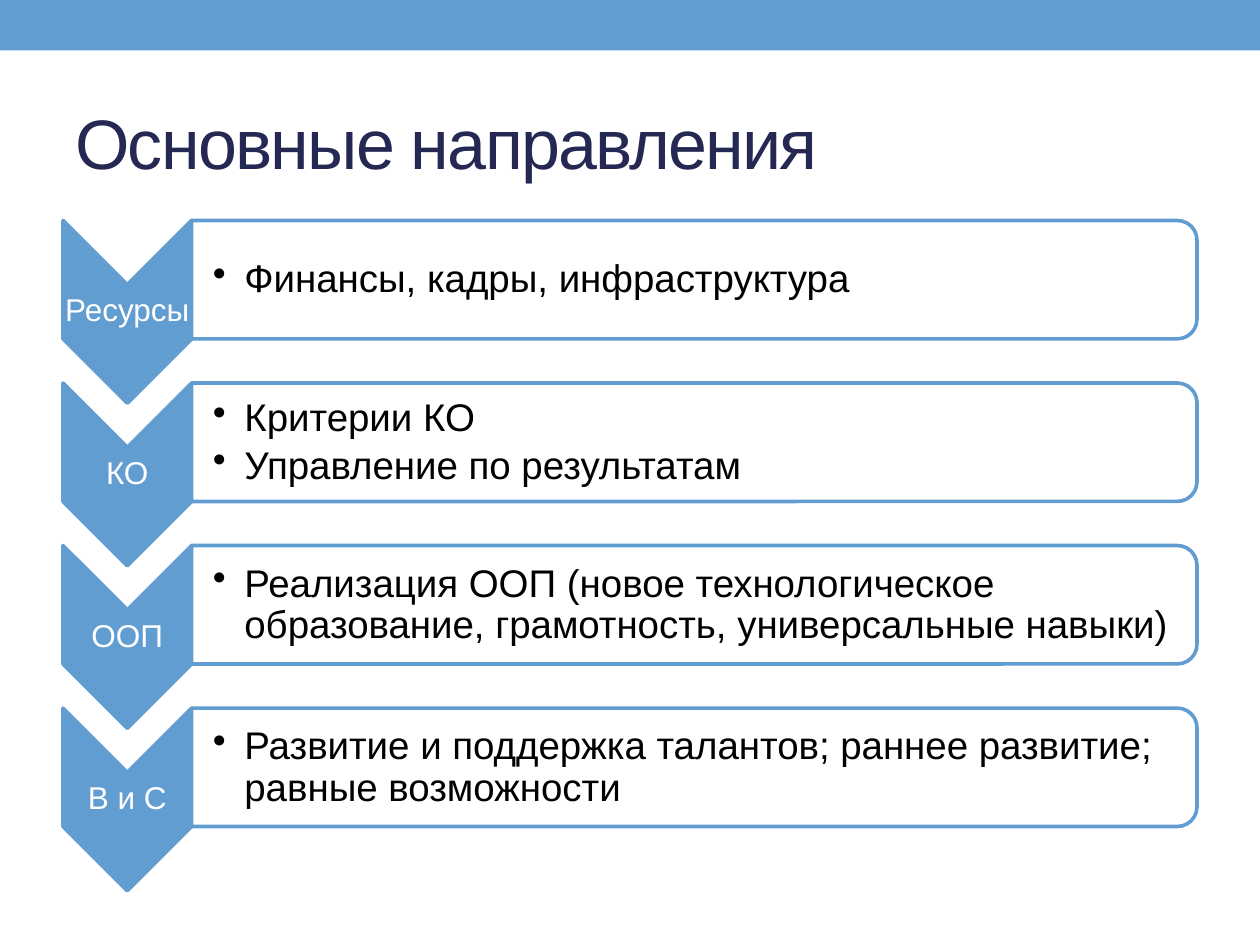
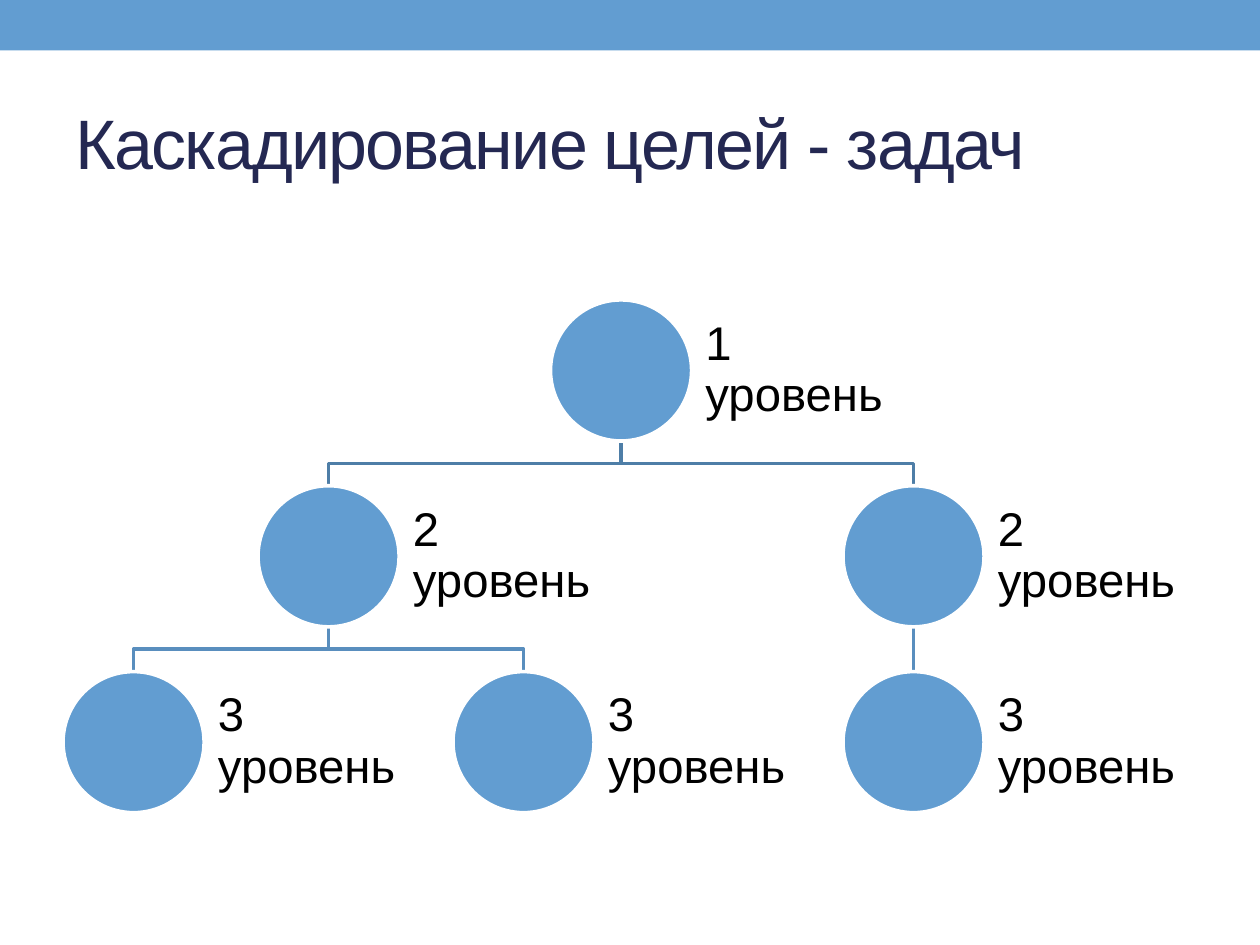
from lxml.etree import SubElement
from pptx import Presentation
from pptx.dml.color import RGBColor
from pptx.enum.shapes import MSO_CONNECTOR, MSO_SHAPE
from pptx.enum.text import MSO_ANCHOR, PP_ALIGN
from pptx.oxml.ns import qn
from pptx.util import Inches, Pt

COLORS = {
    "accent": "629DD1", "title": "242852", "text": "000000", "white": "FFFFFF",
    "upper_branch": "4E7EA7", "lower_branch": "598EBE",
}
FONT = "Arial"
WIDTH, HEIGHT = 10, 7.5
MARGIN = WIDTH * 0.05
LINE_WIDTH = Pt(2.08)

# Grid of the directions list
ROW_TOP, ROW_STEP = 1.75, 1.29
CHEVRON_WIDTH, CHEVRON_HEIGHT = 1.02, 1.45
PANEL_HEIGHT = 0.94

# Grid of the goal tree
COLUMN_STEP, LEVEL_TOP, LEVEL_STEP = 1.5475, 2.38, 1.475
NODE_SIZE, NODE_LABEL_WIDTH = 1.12, 1.69

DIRECTIONS = [
    ("Ресурсы", ["Финансы, кадры, инфраструктура"]),
    ("КО", ["Критерии КО", "Управление по результатам"]),
    ("ООП", ["Реализация ООП (новое технологическое образование, "
             "грамотность, универсальные навыки)"]),
    ("В и С", ["Развитие и поддержка талантов; раннее развитие; "
               "равные возможности"]),
]
# Node: (column, level); branch: parent node, child node
NODES = [(2.5, 0), (1, 1), (0, 2), (2, 2), (4, 1), (4, 2)]
BRANCHES = [(4, 5), (0, 4), (1, 3), (1, 2), (0, 1)]


def color(name):
    return RGBColor.from_string(COLORS[name])


def add_block(slide, kind, left, top, width, height, fill, line=None, turned=False):
    """Place a shape by its visible bounds, also when turned by 90 degrees."""
    if turned:
        left, top = left + (width - height) / 2, top + (height - width) / 2
        width, height = height, width
    block = slide.shapes.add_shape(
        kind, Inches(left), Inches(top), Inches(width), Inches(height))
    block.rotation = 90 if turned else 0
    block.shadow.inherit = False
    block.fill.solid()
    block.fill.fore_color.rgb = color(fill)
    if line:
        block.line.color.rgb = color(line)
        block.line.width = LINE_WIDTH
    else:
        block.line.fill.background()
    return block


def add_text(slide, lines, left, top, width, height, size, ink="text",
             insets=(0.1, 0.05, 0.1, 0.05), align=PP_ALIGN.LEFT,
             spacing=None, after=0):
    """Add wrapped, vertically centred text; after is a share of its size."""
    box = slide.shapes.add_textbox(
        Inches(left), Inches(top), Inches(width), Inches(height))
    frame = box.text_frame
    frame.word_wrap = True
    frame.vertical_anchor = MSO_ANCHOR.MIDDLE
    (frame.margin_left, frame.margin_top,
     frame.margin_right, frame.margin_bottom) = map(Inches, insets)
    frame.text = "\n".join(lines)
    for paragraph in frame.paragraphs:
        paragraph.alignment = align
        paragraph.line_spacing = spacing
        paragraph.space_after = Pt(size * after)
        paragraph.font.name = FONT
        paragraph.font.size = Pt(size)
        paragraph.font.color.rgb = color(ink)
    return frame


def add_bullets(frame, indent):
    for paragraph in frame.paragraphs:
        properties = paragraph._p.get_or_add_pPr()
        properties.set("marL", str(Inches(indent)))
        properties.set("indent", str(-Inches(indent)))
        bullet = SubElement(properties, qn("a:buChar"))
        bullet.set("char", "•")
        # The bullet must come before the default run properties
        properties.find(qn("a:defRPr")).addprevious(bullet)


def add_titled_slide(deck, title):
    slide = deck.slides.add_slide(deck.slide_layouts[6])
    add_block(slide, MSO_SHAPE.RECTANGLE, 0, 0, WIDTH, 0.4, "accent")
    frame = add_text(slide, [title], MARGIN, 0.58, WIDTH - 2 * MARGIN, 1.08,
                     40, "title")
    for run in frame.paragraphs[0].runs:
        run.font._element.set("spc", "-100")
    return slide


def add_direction(slide, row, label, points):
    top = ROW_TOP + row * ROW_STEP
    panel_left = MARGIN + CHEVRON_WIDTH
    panel_width = WIDTH - MARGIN - panel_left
    add_block(slide, MSO_SHAPE.CHEVRON, MARGIN, top, CHEVRON_WIDTH,
              CHEVRON_HEIGHT, "accent", "accent", turned=True)
    add_text(slide, [label], MARGIN, top + CHEVRON_WIDTH / 2, CHEVRON_WIDTH,
             CHEVRON_HEIGHT - CHEVRON_WIDTH, 18, "white", (0.01,) * 4,
             PP_ALIGN.CENTER, 0.9, 0.35)
    add_block(slide, MSO_SHAPE.ROUND_2_SAME_RECTANGLE, panel_left, top,
              panel_width, PANEL_HEIGHT, "white", "accent", turned=True)
    frame = add_text(slide, points, panel_left, top + 0.05, panel_width - 0.04,
                     PANEL_HEIGHT - 0.09, 22, insets=(0.17, 0.02, 0.02, 0.02),
                     spacing=0.9, after=0.15)
    add_bullets(frame, 0.25)


def node_corner(node):
    column, level = node
    return MARGIN + column * COLUMN_STEP, LEVEL_TOP + level * LEVEL_STEP


def add_branch(slide, parent, child):
    """Join the foot of a parent to the head of its child."""
    (parent_left, parent_top), (child_left, child_top) = map(
        node_corner, (parent, child))
    start_x, end_x = (Inches(left + NODE_SIZE / 2)
                      for left in (parent_left, child_left))
    start_y, end_y = Inches(parent_top + NODE_SIZE), Inches(child_top)
    if start_x == end_x:
        branch = slide.shapes.add_connector(
            MSO_CONNECTOR.STRAIGHT, start_x, start_y, end_x, end_y)
        SubElement(branch._element.spPr, qn("a:effectLst"))
    else:
        bend_y = (start_y + end_y) // 2
        outline = slide.shapes.build_freeform(start_x, start_y)
        outline.add_line_segments(
            [(start_x, bend_y), (end_x, bend_y), (end_x, end_y)], close=False)
        branch = outline.convert_to_shape()
        branch.fill.background()
        branch.shadow.inherit = False
    branch.line.color.rgb = color("lower_branch" if parent[1] else "upper_branch")
    branch.line.width = LINE_WIDTH


def add_node(slide, node):
    left, top = node_corner(node)
    add_block(slide, MSO_SHAPE.OVAL, left, top, NODE_SIZE, NODE_SIZE,
              "accent", "white")
    add_text(slide, [f"{node[1] + 1} уровень"], left + NODE_SIZE, top,
             NODE_LABEL_WIDTH, NODE_SIZE, 27, insets=(0.11,) * 4,
             spacing=0.9, after=0.35)


def main():
    deck = Presentation()
    deck.slide_width, deck.slide_height = Inches(WIDTH), Inches(HEIGHT)

    # Main directions
    directions = add_titled_slide(deck, "Основные направления")
    for row, (label, points) in enumerate(DIRECTIONS):
        add_direction(directions, row, label, points)

    # Cascade of goals
    cascade = add_titled_slide(deck, "Каскадирование целей - задач")
    for parent, child in BRANCHES:
        add_branch(cascade, NODES[parent], NODES[child])
    for node in NODES:
        add_node(cascade, node)

    deck.save("out.pptx")


if __name__ == "__main__":
    main()
